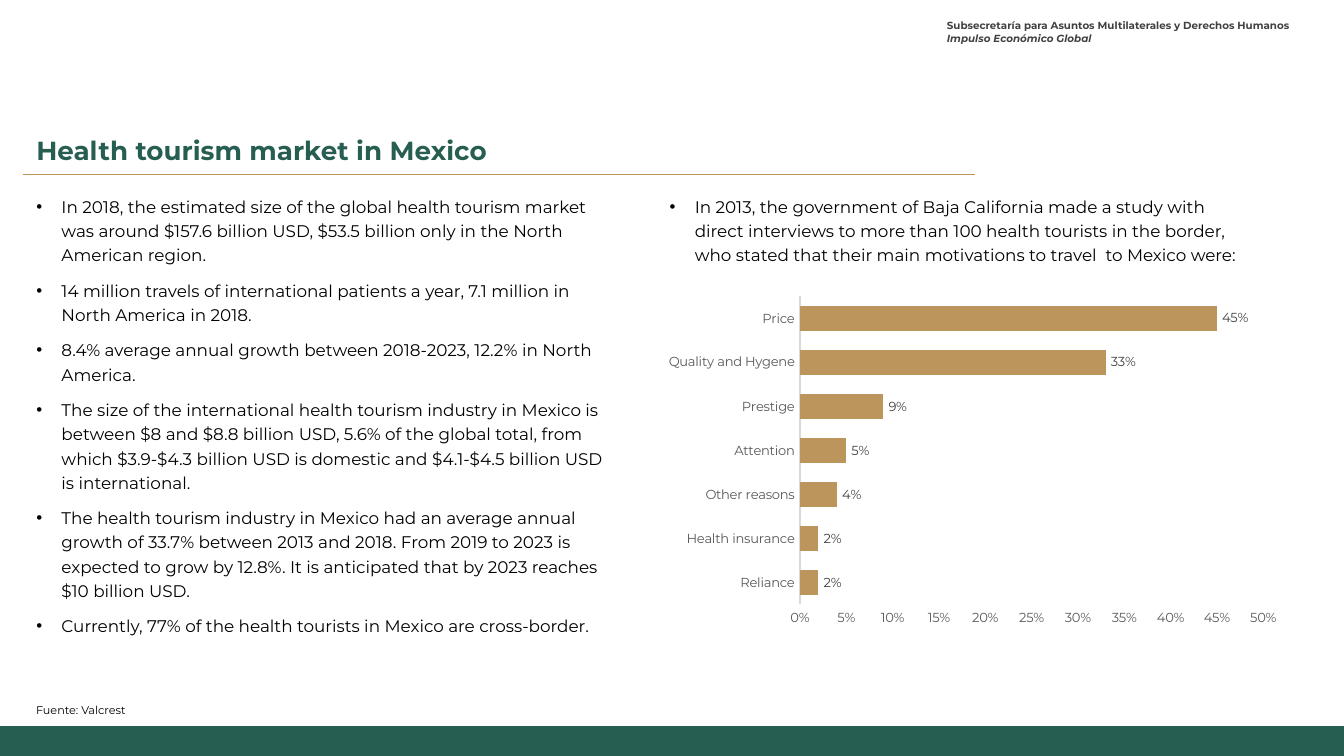
import pptx
import pptx.chart.data
import pptx.dml.color
import pptx.enum.chart
import pptx.enum.shapes
import pptx.enum.text
import pptx.oxml
import pptx.oxml.ns
import pptx.util
from lxml import etree

Pt = pptx.util.Pt
ALIGN = pptx.enum.text.PP_ALIGN
GREEN, GOLD, BLACK = "265E51", "BC955C", "000000"
DARK, GREY, PALE = "404040", "595959", "D9D9D9"

MARKET_FACTS = [
    "In 2018, the estimated size of the global health tourism market was around $157.6 billion USD, "
    "$53.5 billion only in the North American region.",
    "14 million travels of international patients a year, 7.1 million in North America in 2018.",
    "8.4% average annual growth between 2018-2023, 12.2% in North America.",
    "The size of the international health tourism industry in Mexico is between $8 and $8.8 billion USD, "
    "5.6% of the global total, from which $3.9-$4.3 billion USD is domestic and $4.1-$4.5 billion USD "
    "is international.",
    "The health tourism industry in Mexico had an average annual growth of 33.7% between 2013 and 2018. "
    "From 2019 to 2023 is expected to grow by 12.8%. It is anticipated that by 2023 reaches $10 billion USD.",
    "Currently, 77% of the health tourists in Mexico are cross-border.",
]
STUDY = [
    "In 2013, the government of Baja California made a study with direct interviews to more than "
    "100 health tourists in the border, who stated that their main motivations to travel  to Mexico were:",
]
MOTIVATIONS = {
    "Reliance": 0.02, "Health insurance": 0.02, "Other reasons": 0.04, "Attention": 0.05,
    "Prestige": 0.09, "Quality and Hygene": 0.33, "Price": 0.45,
}


def rgb(value):
    return pptx.dml.color.RGBColor.from_string(value)


class SlideWriter:
    typeface = "Montserrat"

    def __init__(self, page):
        self.page = page

    def style(self, font, size, color, bold=False, italic=False):
        font.name, font.size = self.typeface, Pt(size)
        font.bold, font.italic = bold, italic
        font.color.rgb = rgb(color)

    def frame(self, box, area, inset=None):
        box.left, box.top, box.width, box.height = map(Pt, area)
        frame = box.text_frame
        frame.word_wrap = True
        frame.auto_size = pptx.enum.text.MSO_AUTO_SIZE.SHAPE_TO_FIT_TEXT
        frame.vertical_anchor = pptx.enum.text.MSO_ANCHOR.TOP
        if inset is not None:
            frame.auto_size = pptx.enum.text.MSO_AUTO_SIZE.NONE
            frame.margin_left = frame.margin_right = Pt(inset)
            frame.margin_top = frame.margin_bottom = Pt(inset)
        return frame

    def paragraphs(self, frame, lines, size, color, align=ALIGN.LEFT, spacing=1.0, after=0):
        for index, (text, bold, italic) in enumerate(lines):
            para = frame.add_paragraph() if index else frame.paragraphs[0]
            para.alignment = align
            para.line_spacing = spacing
            para.space_before, para.space_after = Pt(0), Pt(after)
            span = para.add_run()
            span.text = text
            self.style(span.font, size, color, bold, italic)

    def text(self, area, lines, size, color, inset=None, **layout):
        box = self.page.shapes.add_textbox(*map(Pt, area))
        self.paragraphs(self.frame(box, area, inset), lines, size, color, **layout)

    def title(self, area, text):
        frame = self.frame(self.page.shapes.title, area)
        self.paragraphs(frame, [(text, True, False)], 14, GREEN)

    def bullets(self, slot, area, items):
        frame = self.frame(self.page.placeholders[slot], area)
        lines = [(item, False, False) for item in items]
        self.paragraphs(frame, lines, 9, BLACK, spacing=1.2, after=6)
        for para in frame.paragraphs:
            props = para._p.get_or_add_pPr()
            props.set("marL", str(Pt(13.5)))
            props.set("indent", str(-Pt(13.5)))
            qn = pptx.oxml.ns.qn
            color = etree.SubElement(props, qn("a:buClr"))
            etree.SubElement(color, qn("a:srgbClr"), val=BLACK)
            etree.SubElement(props, qn("a:buFont"), typeface="Arial")
            etree.SubElement(props, qn("a:buChar"), char="•")

    def band(self, area, color):
        shape = self.page.shapes.add_shape(pptx.enum.shapes.MSO_SHAPE.RECTANGLE, *map(Pt, area))
        shape.shadow.inherit = False
        shape.fill.solid()
        shape.fill.fore_color.rgb = rgb(color)
        shape.line.fill.background()

    def rule(self, left, right, top, color):
        straight = pptx.enum.shapes.MSO_CONNECTOR.STRAIGHT
        line = self.page.shapes.add_connector(straight, Pt(left), Pt(top), Pt(right), Pt(top))
        line.line.color.rgb = rgb(color)
        line.line.width = Pt(0.75)
        etree.SubElement(line._element.spPr, pptx.oxml.ns.qn("a:effectLst"))

    def bars(self, area, shares):
        data = pptx.chart.data.CategoryChartData(number_format="0%")
        data.categories = list(shares)
        data.add_series("Series 1", list(shares.values()))
        kind = pptx.enum.chart.XL_CHART_TYPE.BAR_CLUSTERED
        chart = self.page.shapes.add_chart(kind, *map(Pt, area), data).chart
        chart.has_legend = chart.has_title = False
        self.style(chart.font, 7, BLACK)

        for axis in (chart.category_axis, chart.value_axis):
            axis.major_tick_mark = axis.minor_tick_mark = pptx.enum.chart.XL_TICK_MARK.NONE
            axis.has_major_gridlines = False
            self.style(axis.tick_labels.font, 7, GREY)
        chart.category_axis.format.line.color.rgb = rgb(PALE)
        chart.category_axis.format.line.width = Pt(0.75)
        scale = chart.value_axis
        scale.format.line.fill.background()
        scale.minimum_scale, scale.maximum_scale, scale.major_unit = 0, 0.5, 0.05
        scale.tick_labels.number_format = "0%"
        scale.tick_labels.number_format_is_linked = False

        plot = chart.plots[0]
        plot.gap_width = 75
        plot.vary_by_categories = False
        series = plot.series[0]
        series.format.fill.solid()
        series.format.fill.fore_color.rgb = rgb(GOLD)
        labels = series.data_labels
        labels.show_value = True
        labels.number_format, labels.number_format_is_linked = "0%", False
        labels.position = pptx.enum.chart.XL_LABEL_POSITION.OUTSIDE_END
        self.style(labels.font, 7, DARK)


def main():
    deck = pptx.Presentation()
    deck.slide_width, deck.slide_height = Pt(720), Pt(405)
    writer = SlideWriter(deck.slides.add_slide(deck.slide_layouts[3]))
    left, right, column = 12.25, 351.5, 322.5

    header = [
        ("Subsecretaría para Asuntos Multilaterales y Derechos Humanos", True, False),
        ("Impulso Económico Global", True, True),
    ]
    writer.text((502.75, 6, 193, 25), header, 5.5, DARK, inset=4.5)
    writer.band((0, 389, 720, 16), GREEN)
    writer.title((left, 68.5, 510.5, 24.5), "Health tourism market in Mexico")
    writer.rule(left, 522.5, 93.5, GOLD)
    writer.bullets(1, (left, 99.5, column, 265), MARKET_FACTS)
    writer.bullets(2, (right, 99.5, column, 45.5), STUDY)
    writer.bars((right, 155, 339, 183.5), MOTIVATIONS)
    writer.text((left, 373, 283.5, 14.5), [("Fuente: Valcrest", False, False)], 6, BLACK,
                align=ALIGN.JUSTIFY, spacing=1.07, after=8)
    deck.save("out.pptx")


if __name__ == "__main__":
    main()
